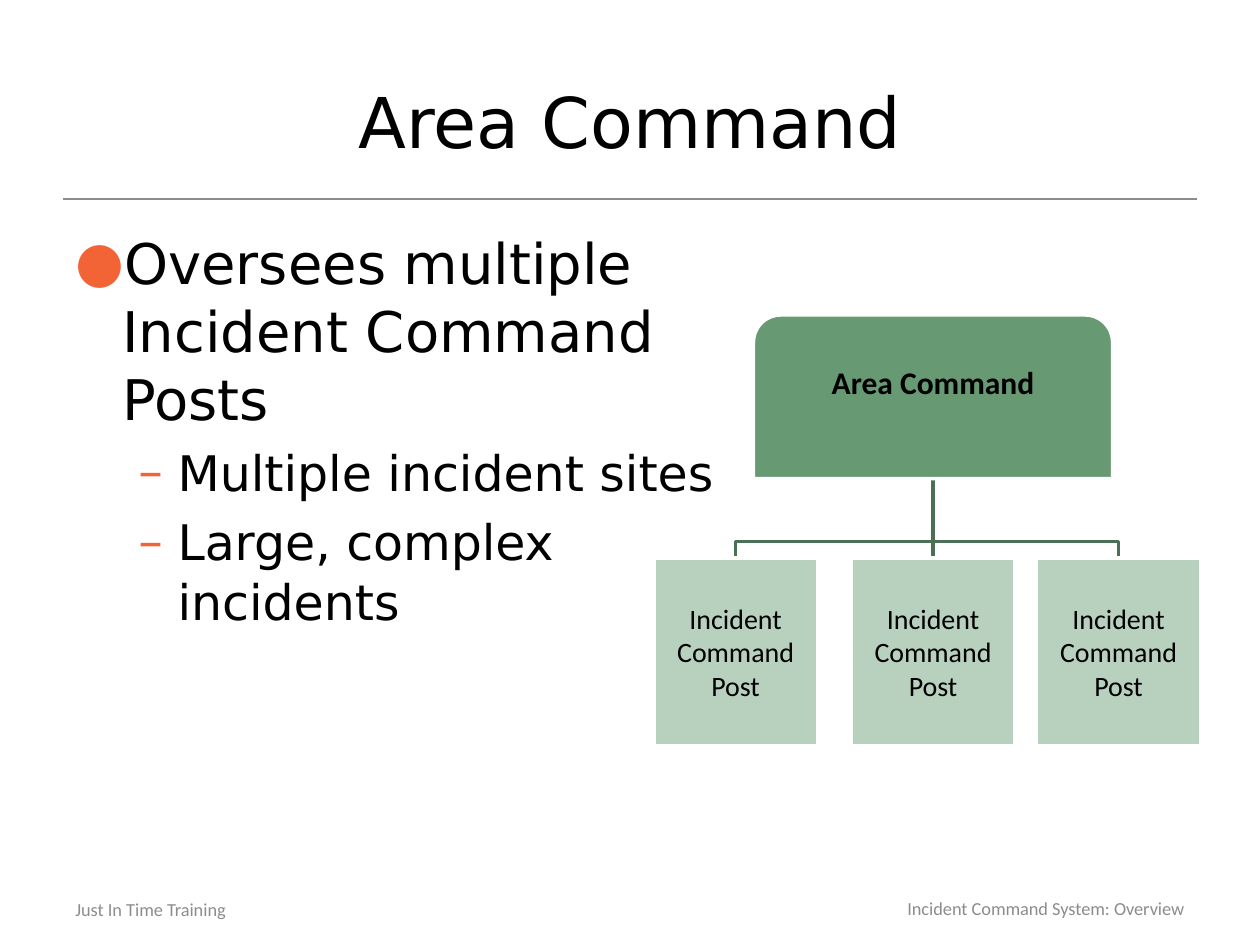
from dataclasses import dataclass

from lxml import etree
from pptx import Presentation
from pptx import util as u
from pptx.dml.color import RGBColor
from pptx.enum import shapes as sh, text as tx
from pptx.oxml import ns

Cm, Pt = u.Cm, u.Pt
MID = tx.MSO_ANCHOR.MIDDLE
LEFT, RIGHT, CENTER = tx.PP_ALIGN.LEFT, tx.PP_ALIGN.RIGHT, tx.PP_ALIGN.CENTER


@dataclass(frozen=True)
class Theme:
    ink: str = "000000"
    gray: str = "8C8C8C"
    accent: str = "F26336"
    link: str = "4B7054"
    root: str = "679973"
    post: str = "B8D0BE"
    edge: str = "FFFFFF"
    head: str = "DejaVu Sans"
    body: str = "Calibri"
    title: float = 40
    main: float = 32
    sub: float = 28
    big: float = 18
    small: float = 16
    foot: float = 10.5


@dataclass(frozen=True)
class Box:
    x: float
    y: float
    w: float
    h: float

    @property
    def mid(self) -> float:
        return self.x + self.w / 2

    @property
    def base(self) -> float:
        return self.y + self.h

    def lens(self) -> tuple:
        return Cm(self.x), Cm(self.y), Cm(self.w), Cm(self.h)


@dataclass(frozen=True)
class Point:
    words: str
    mark: str
    size: float
    pitch: float   # line height in points
    gap: float     # space before in points
    indent: float
    hang: float
    level: int = 0


T = Theme()
RULE = (1.27, 24.13, 4.01)
TITLE = Box(1.27, 0.84, 22.86, 3.18)
BODY = Box(1.27, 4.47, 22.86, 12.9)
ROOT = Box(15.19, 6.35, 7.24, 3.3)
POSTS = [Box(x, 11.25, 3.3, 3.78) for x in (13.18, 17.16, 20.9)]
BAR = 10.92
POINTS = [
    Point("Oversees multiple\vIncident Command\vPosts", "●", T.main, 38.9, 0, 0.95, 0.95),
    Point("Multiple incident sites", "–", T.sub, 34, 5.6, 2.06, 0.79, 1),
    Point("Large, complex\vincidents", "–", T.sub, 34, 5.6, 2.06, 0.79, 1),
]
FEET = [
    (Box(1.27, 17.98, 5.92, 0.69), "Just In Time Training", LEFT),
    (Box(16.08, 17.98, 8.05, 0.64), "Incident Command System: Overview", RIGHT),
]


def apply(obj, vals: dict) -> None:
    for key, val in vals.items():
        setattr(obj, key, val)


def style(para, size: float, face: str, color: str = T.ink, bold: bool = False) -> None:
    apply(para.font, {"size": Pt(size), "name": face, "bold": bold})
    para.font.color.rgb = RGBColor.from_string(color)


def stroke(line, color: str, width: float) -> None:
    line.color.rgb = RGBColor.from_string(color)
    line.width = Pt(width)


def straight(slide, ends: tuple, color: str, width: float):
    line = slide.shapes.add_connector(
        sh.MSO_CONNECTOR.STRAIGHT, *(Cm(v) for v in ends))
    stroke(line.line, color, width)
    etree.SubElement(line._element.spPr, ns.qn("a:effectLst"))
    return line


def elbow(slide, top: Box, low: Box) -> None:
    pen = slide.shapes.build_freeform(Cm(top.mid), Cm(top.base))
    turns = [(top.mid, BAR), (low.mid, BAR), (low.mid, low.y)]
    pen.add_line_segments([(Cm(x), Cm(y)) for x, y in turns], close=False)
    path = pen.convert_to_shape()
    path.fill.background()
    path.shadow.inherit = False
    stroke(path.line, T.link, 2)


def node(slide, kind, box: Box, words: str, fill: str, size: float,
         bold: bool = False, low: float = 0.03):
    shape = slide.shapes.add_shape(kind, *box.lens())
    shape.shadow.inherit = False
    shape.fill.solid()
    shape.fill.fore_color.rgb = RGBColor.from_string(fill)
    stroke(shape.line, T.edge, 2)
    frame = shape.text_frame
    pad = Cm(0.03)
    apply(frame, {"word_wrap": True, "vertical_anchor": MID, "margin_left": pad,
                  "margin_right": pad, "margin_top": pad, "margin_bottom": Cm(low)})
    para = frame.paragraphs[0]
    apply(para, {"text": words, "alignment": CENTER})
    style(para, size, T.body, bold=bold)
    return shape


def bullet(para, item: Point) -> None:
    apply(para, {"text": item.words, "level": item.level,
                 "line_spacing": Pt(item.pitch), "space_before": Pt(item.gap)})
    props = para._p.get_or_add_pPr()
    props.set("marL", str(Cm(item.indent)))
    props.set("indent", str(-Cm(item.hang)))
    tint = etree.SubElement(props, ns.qn("a:buClr"))
    etree.SubElement(tint, ns.qn("a:srgbClr"), val=T.accent)
    etree.SubElement(props, ns.qn("a:buFont"), typeface=T.head)
    etree.SubElement(props, ns.qn("a:buChar"), char=item.mark)
    style(para, item.size, T.head)


def label(slide, box: Box):
    frame = slide.shapes.add_textbox(*box.lens()).text_frame
    frame.word_wrap = True
    return frame


def main() -> None:
    deck = Presentation()
    apply(deck, {"slide_width": Cm(25.4), "slide_height": Cm(19.05)})
    slide = deck.slides.add_slide(deck.slide_layouts[5])

    # Title and the rule below it
    head = slide.shapes.title
    apply(head, dict(zip(("left", "top", "width", "height"), TITLE.lens())))
    apply(head.text_frame, {"text": "Area Command", "vertical_anchor": MID})
    head.text_frame.paragraphs[0].alignment = CENTER
    style(head.text_frame.paragraphs[0], T.title, T.head)
    left, right, y = RULE
    straight(slide, (left, y, right, y), T.gray, 0.75)

    # Bullet list
    frame = label(slide, BODY)
    for i, item in enumerate(POINTS):
        bullet(frame.add_paragraph() if i else frame.paragraphs[0], item)

    # Footer
    for box, words, side in FEET:
        frame = label(slide, box)
        frame.vertical_anchor = MID
        para = frame.paragraphs[0]
        apply(para, {"text": words, "alignment": side})
        style(para, T.foot, T.body, T.gray)

    # Chart links lie behind the boxes
    first, center, last = POSTS
    for box in (first, last):
        elbow(slide, ROOT, box)
    stem = straight(slide, (ROOT.mid, ROOT.base, center.mid, center.y), T.link, 2)

    # Chart boxes
    kinds = sh.MSO_SHAPE
    root = node(slide, kinds.ROUND_2_SAME_RECTANGLE, ROOT, "Area Command",
                T.root, T.big, True, 0.78)
    posts = [node(slide, kinds.RECTANGLE, box, "Incident Command Post", T.post, T.small)
             for box in POSTS]
    stem.begin_connect(root, 2)
    stem.end_connect(posts[1], 0)

    deck.save("out.pptx")


if __name__ == "__main__":
    main()
